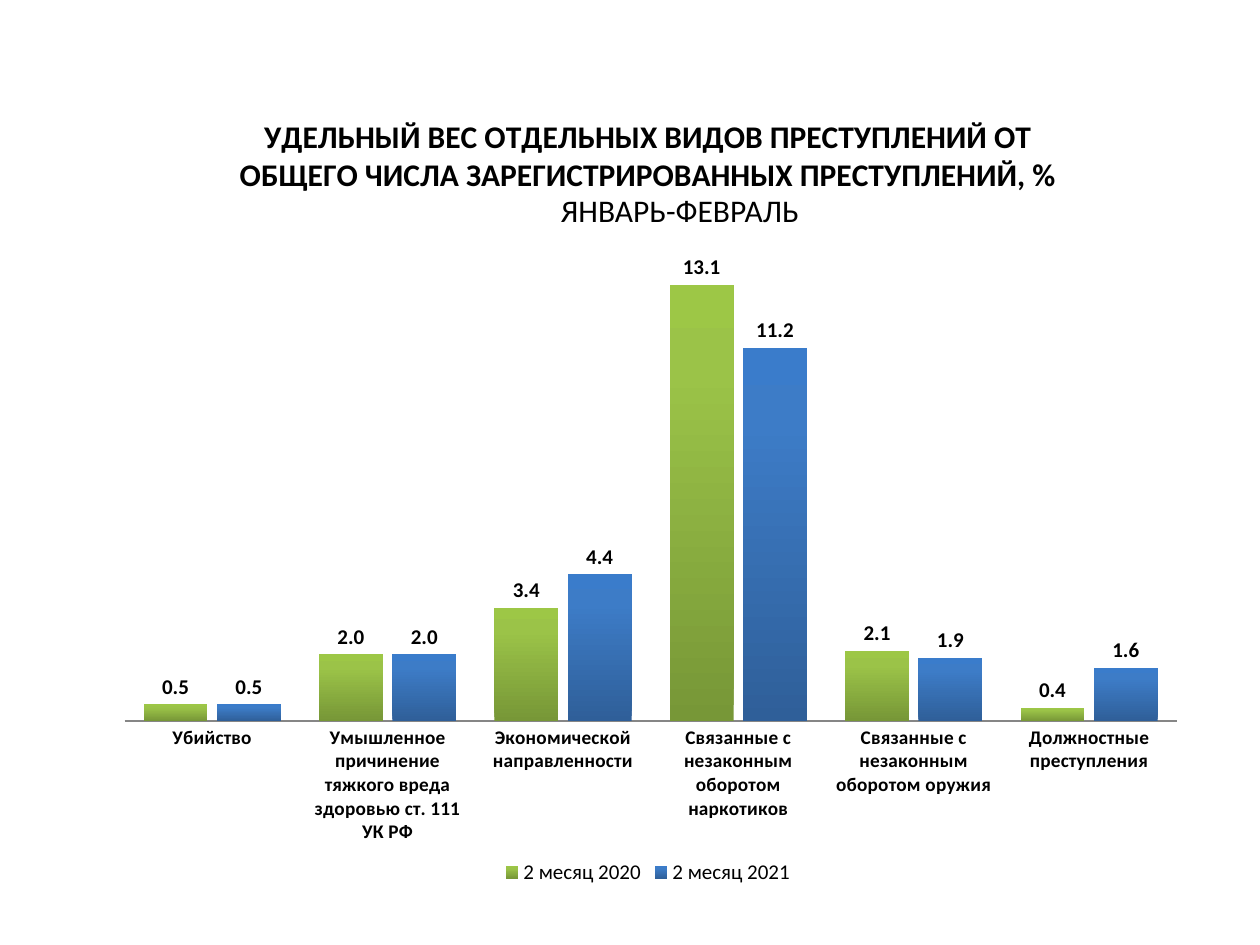
from pptx import Presentation
from pptx import util as u
from pptx.chart.data import CategoryChartData
from pptx.dml.color import RGBColor
from pptx.enum import chart as ch, text
from pptx.oxml import parse_xml
from pptx.oxml.ns import nsdecls

BLACK = RGBColor(0x00, 0x00, 0x00)
AXIS_GRAY = RGBColor(0x86, 0x86, 0x86)
GREENS = (RGBColor(0x77, 0x97, 0x37), RGBColor(0x9B, 0xC3, 0x48), RGBColor(0x9D, 0xC7, 0x46))
BLUES = (RGBColor(0x2F, 0x5F, 0x99), RGBColor(0x3D, 0x7C, 0xC7), RGBColor(0x3A, 0x7C, 0xCB))
STOPS = (0, 80, 100)

TITLE = ("УДЕЛЬНЫЙ ВЕС ОТДЕЛЬНЫХ ВИДОВ ПРЕСТУПЛЕНИЙ ОТ "
         "ОБЩЕГО ЧИСЛА ЗАРЕГИСТРИРОВАННЫХ ПРЕСТУПЛЕНИЙ, %")
CATEGORIES = (
    "Убийство",
    "Умышленное причинение тяжкого вреда здоровью ст. 111 УК РФ",
    "Экономической направленности",
    "Связанные с незаконным оборотом наркотиков",
    "Связанные с незаконным оборотом оружия",
    "Должностные преступления",
)
SERIES = (
    ("2 месяц 2020", (0.5, 2, 3.4, 13.1, 2.1, 0.4), GREENS),
    ("2 месяц 2021", (0.5, 2, 1.9 + 2.5, 11.2, 1.9, 1.6), BLUES),
)
SERIES = (SERIES[0], ("2 месяц 2021", (0.5, 2, 4.4, 11.2, 1.9, 1.6), BLUES))


def px(n):
    return u.Emu(round(n * 914400 / 126))


class Deck:
    font = "Calibri"
    number_format = "0.0"

    def __init__(self, width, height):
        self.prs = Presentation()
        self.prs.slide_width, self.prs.slide_height = px(width), px(height)
        self.s = self.prs.slides.add_slide(self.prs.slide_layouts[6])

    def style(self, font, size, bold=False):
        font.name, font.size, font.bold = self.font, u.Pt(size), bold
        font.color.rgb = BLACK

    def gradient(self, series, colors):
        series.format.fill.gradient()
        series.format.fill.gradient_angle = 90
        stops = "".join(
            f'<a:gs pos="{pos * 1000}"><a:srgbClr val="{color}"/></a:gs>'
            for pos, color in zip(STOPS, colors))
        old = series._element.xpath(".//a:gsLst")[0]
        old.getparent().replace(old, parse_xml(f'<a:gsLst {nsdecls("a")}>{stops}</a:gsLst>'))

    def plot_layout(self, chart, x, y, w, h):
        area = chart._chartSpace.chart.plotArea
        for old in area.xpath("./c:layout"):
            area.remove(old)
        area.insert(0, parse_xml(
            f'<c:layout {nsdecls("c")}><c:manualLayout><c:layoutTarget val="inner"/>'
            '<c:xMode val="edge"/><c:yMode val="edge"/>'
            f'<c:x val="{x}"/><c:y val="{y}"/><c:w val="{w}"/><c:h val="{h}"/>'
            '</c:manualLayout></c:layout>'))

    def column_chart(self, x, y, w, h, title, categories, series):
        data = CategoryChartData(number_format=self.number_format)
        data.categories = categories
        for name, values, _ in series:
            data.add_series(name, values)
        chart = self.s.shapes.add_chart(
            ch.XL_CHART_TYPE.COLUMN_CLUSTERED, px(x), px(y), px(w), px(h), data).chart
        self.style(chart.font, 18)

        chart.has_title = True
        r = chart.chart_title.text_frame.paragraphs[0].add_run()
        r.text = title
        self.style(r.font, 18, True)
        chart.chart_title.include_in_layout = False

        chart.has_legend = True
        chart.legend.position = ch.XL_LEGEND_POSITION.BOTTOM
        chart.legend.include_in_layout = False
        self.style(chart.legend.font, 12)

        axis = chart.category_axis
        axis.major_tick_mark = ch.XL_TICK_MARK.NONE
        axis.format.line.color.rgb = AXIS_GRAY
        self.style(axis.tick_labels.font, 11, True)
        value_axis = chart.value_axis
        value_axis.minimum_scale, value_axis.maximum_scale = 0, 14
        value_axis.has_major_gridlines = False
        value_axis.visible = False

        plot = chart.plots[0]
        plot.vary_by_categories = False
        plot.gap_width, plot.overlap = 60, -15
        for ser, (_, _, colors) in zip(plot.series, series):
            self.gradient(ser, colors)
            labels = ser.data_labels
            labels.show_value = True
            labels.position = ch.XL_LABEL_POSITION.OUTSIDE_END
            labels.number_format = self.number_format
            labels.number_format_is_linked = False
            self.style(labels.font, 12, True)
        return chart

    def label(self, x, y, w, h, words, size):
        tf = self.s.shapes.add_textbox(px(x), px(y), px(w), px(h)).text_frame
        tf.word_wrap = False
        tf.auto_size = text.MSO_AUTO_SIZE.SHAPE_TO_FIT_TEXT
        p = tf.paragraphs[0]
        p.alignment = text.PP_ALIGN.CENTER
        r = p.add_run()
        r.text = words
        self.style(r.font, size)


def main():
    deck = Deck(1260, 945)
    chart = deck.column_chart(105, 86, 1086, 804, TITLE, CATEGORIES, SERIES)
    deck.plot_layout(chart, 0.018, 0.21, 0.969, 0.58)
    deck.label(547, 185, 266, 50, "ЯНВАРЬ-ФЕВРАЛЬ", 18)
    deck.prs.save("out.pptx")


if __name__ == "__main__":
    main()
